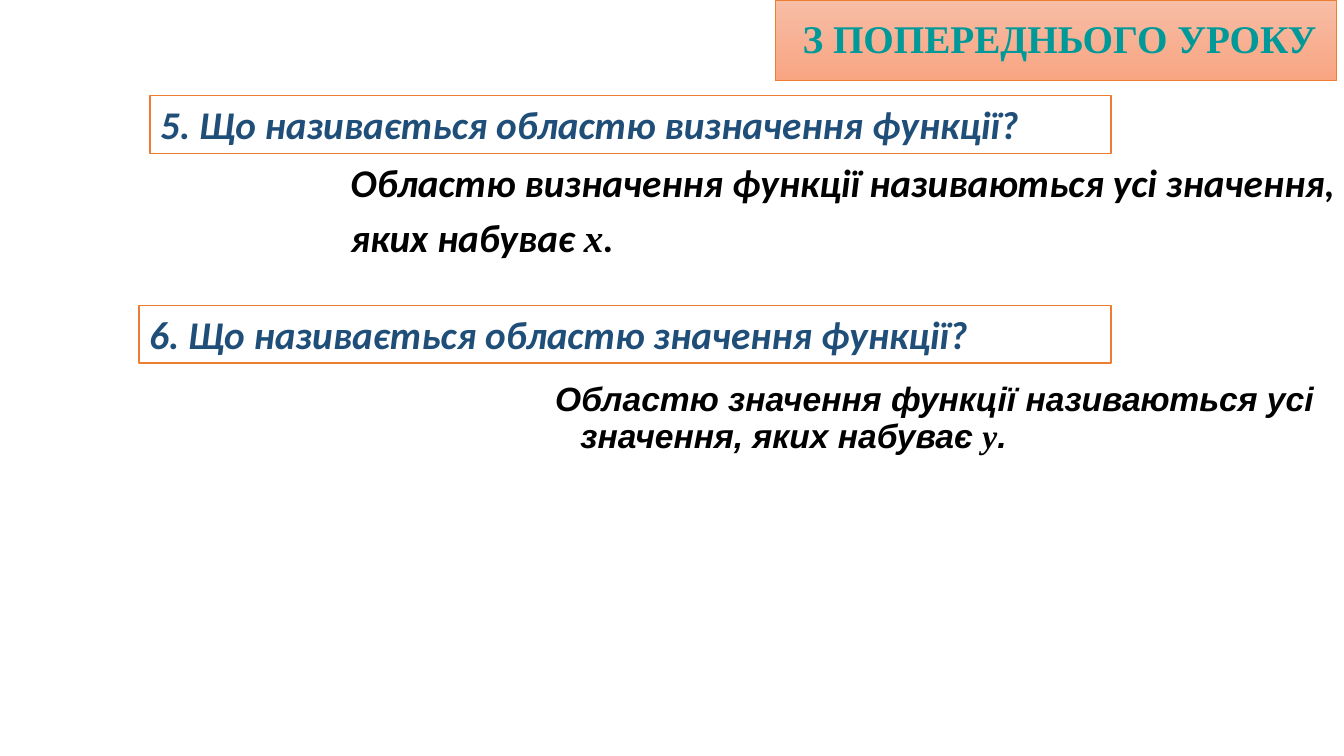
from pptx import Presentation
from pptx.dml.color import RGBColor
from pptx.enum.shapes import MSO_SHAPE as Shape
from pptx.enum.text import MSO_ANCHOR as Anchor, PP_ALIGN as Align
from pptx.util import Pt

COLORS = {
    "paper": "FFFFFF",
    "border": "ED7D31",
    "banner_top": "F7BDA5",
    "banner_bottom": "F8A582",
    "banner_text": "009999",
    "question": "1F4E79",
    "answer": "000000",
}
MATH_FONT = "Times New Roman"


def color(name):
    return RGBColor.from_string(COLORS[name])


def write(box, paragraphs, size=28, font="Calibri", ink="answer", italic=True,
          align=Align.LEFT, anchor=Anchor.TOP, line=1.0, gap=0, hanging=0):
    """Fill a box; each paragraph is a list of strings or (string, font) pairs."""
    frame = box.text_frame
    frame.word_wrap = True
    frame.vertical_anchor = anchor
    for index, spans in enumerate(paragraphs):
        para = frame.add_paragraph() if index else frame.paragraphs[0]
        para.alignment = align
        para.line_spacing = line
        if index:
            para.space_before = Pt(gap)
        if hanging:
            properties = para._p.get_or_add_pPr()
            properties.set("marL", str(Pt(hanging)))
            properties.set("indent", str(-Pt(hanging)))
        for item in spans:
            text, face = (item, font) if isinstance(item, str) else item
            span = para.add_run()
            span.text = text
            span.font.name = face
            span.font.size = Pt(size)
            span.font.bold = True
            span.font.italic = italic
            span.font.color.rgb = color(ink)


def add_frame(page, left, top, width, height, border):
    frame = page.shapes.add_shape(Shape.RECTANGLE, Pt(left), Pt(top), Pt(width), Pt(height))
    frame.shadow.inherit = False
    frame.line.color.rgb = color("border")
    frame.line.width = Pt(border)
    return frame


def add_banner(page, text):
    banner = add_frame(page, 553.7, 0, 401, 57.6, border=0.5)
    banner.fill.gradient()
    banner.fill.gradient_angle = 270
    for stop, name in zip(banner.fill.gradient_stops, ("banner_top", "banner_bottom")):
        stop.color.rgb = color(name)
    banner.text_frame.margin_right = Pt(14.2)
    write(banner, [[text]], font="Times New Roman", ink="banner_text", italic=False,
          align=Align.RIGHT, anchor=Anchor.MIDDLE, line=0.9)


def add_question(page, text, left, top, width):
    question = add_frame(page, left, top, width, 41.2, border=1)
    question.fill.solid()
    question.fill.fore_color.rgb = color("paper")
    write(question, [[text]], ink="question")


def add_answer(page, paragraphs, left, top, width, height, **style):
    answer = page.shapes.add_textbox(Pt(left), Pt(top), Pt(width), Pt(height))
    write(answer, paragraphs, **style)


def main():
    deck = Presentation()
    deck.slide_width, deck.slide_height = Pt(960), Pt(540)
    page = deck.slides.add_slide(deck.slide_layouts[6])

    add_banner(page, "З ПОПЕРЕДНЬОГО УРОКУ")
    add_question(page, "5. Що називається областю визначення функції?", 107.3, 68.4, 686.2)
    add_answer(page, [
        ["Областю визначення функції називаються усі значення,"],
        ["яких набуває ", ("x", MATH_FONT), "."],
    ], 243.4, 109.4, 834.5, 82, gap=5.6)
    add_question(page, "6. Що називається областю значення функції?", 99.4, 218.2, 694.1)
    add_answer(page, [
        ["Областю значення функції називаються усі значення, яких набуває ",
         ("y", MATH_FONT), "."],
    ], 389.5, 270, 643.7, 64, size=24, font="Arial", line=0.9, hanging=18)

    deck.save("out.pptx")


if __name__ == "__main__":
    main()
